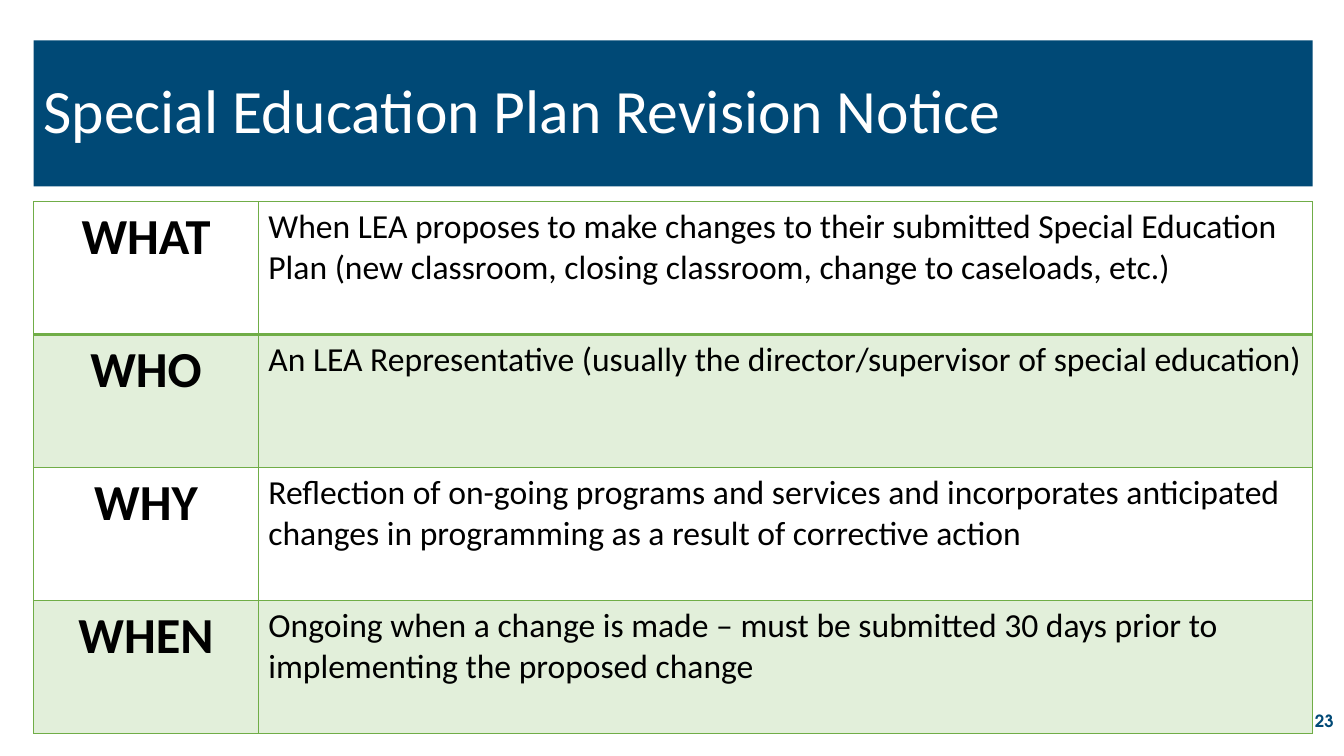
"""Build the slide that summarises the special education plan revision notice."""
from dataclasses import dataclass

import lxml.etree
import pptx
import pptx.dml.color
import pptx.enum.shapes
import pptx.enum.text
import pptx.oxml.ns
import pptx.table
import pptx.text.text
import pptx.util

Cm = pptx.util.Cm
Pt = pptx.util.Pt
Align = pptx.enum.text.PP_ALIGN
Anchor = pptx.enum.text.MSO_ANCHOR

COLORS = {
    "navy": "004976",
    "green": "70AD47",
    "pale_green": "E2EFDA",
    "white": "FFFFFF",
    "black": "000000",
}
LEFT, WIDTH = 0.85, 32.23
LABEL_WIDTH, ROW_HEIGHT = 5.66, 3.35


@dataclass
class TextStyle:
    size: int
    color: str
    bold: bool = False
    align: Align = Align.LEFT
    font: str = "Calibri"


@dataclass
class NoticeRow:
    label: str
    detail: str


TITLE_STYLE = TextStyle(44, "white")
LABEL_STYLE = TextStyle(36, "black", True, Align.CENTER)
DETAIL_STYLE = TextStyle(24, "black")
NUMBER_STYLE = TextStyle(12, "navy", True, Align.RIGHT, "TeX Gyre Adventor")

NOTICE_ROWS = [
    NoticeRow("WHAT", "When LEA proposes to make changes to their submitted Special Education "
              "Plan (new classroom, closing classroom, change to caseloads, etc.)"),
    NoticeRow("WHO", "An LEA Representative (usually the director/supervisor of special education)"),
    NoticeRow("WHY", "Reflection of on-going programs and services and incorporates anticipated "
              "changes in programming as a result of corrective action"),
    NoticeRow("WHEN", "Ongoing when a change is made – must be submitted 30 days prior to "
              "implementing the proposed change"),
]


def rgb(name: str) -> pptx.dml.color.RGBColor:
    return pptx.dml.color.RGBColor.from_string(COLORS[name])


def write(text_frame: pptx.text.text.TextFrame, text: str, style: TextStyle) -> None:
    text_frame.text = text
    text_frame.word_wrap = True
    paragraph = text_frame.paragraphs[0]
    paragraph.alignment = style.align
    font = paragraph.runs[0].font
    font.name = style.font
    font.size = Pt(style.size)
    font.bold = style.bold
    font.color.rgb = rgb(style.color)


def set_borders(cell: pptx.table._Cell, widths: dict[str, int]) -> None:
    qn = pptx.oxml.ns.qn
    properties = cell._tc.get_or_add_tcPr()
    for side, width in widths.items():
        line = lxml.etree.SubElement(properties, qn(f"a:ln{side}"), w=str(Pt(width)))
        fill = lxml.etree.SubElement(line, qn("a:solidFill"))
        lxml.etree.SubElement(fill, qn("a:srgbClr"), val=COLORS["green"])


def add_title(slide: pptx.slide.Slide) -> None:
    banner = slide.shapes.add_shape(
        pptx.enum.shapes.MSO_SHAPE.RECTANGLE, Cm(LEFT), Cm(1.02), Cm(WIDTH), Cm(3.68))
    banner.shadow.inherit = False
    banner.fill.solid()
    banner.fill.fore_color.rgb = rgb("navy")
    banner.line.fill.background()
    write(banner.text_frame, "Special Education Plan Revision Notice", TITLE_STYLE)
    banner.text_frame.vertical_anchor = Anchor.MIDDLE
    banner.text_frame.paragraphs[0].line_spacing = 0.9


def add_notice_table(slide: pptx.slide.Slide) -> None:
    table = slide.shapes.add_table(
        len(NOTICE_ROWS), 2, Cm(LEFT), Cm(5.08), Cm(WIDTH),
        Cm(ROW_HEIGHT * len(NOTICE_ROWS))).table
    table.first_row = False
    table.horz_banding = False
    table.columns[0].width = Cm(LABEL_WIDTH)
    table.columns[1].width = Cm(WIDTH - LABEL_WIDTH)
    for index, notice in enumerate(NOTICE_ROWS):
        table.rows[index].height = Cm(ROW_HEIGHT)
        borders = {"L": 1, "R": 1, "T": 2 if index == 1 else 1, "B": 2 if index == 0 else 1}
        contents = [(notice.label, LABEL_STYLE), (notice.detail, DETAIL_STYLE)]
        for column, (text, style) in enumerate(contents):
            cell = table.cell(index, column)
            write(cell.text_frame, text, style)
            set_borders(cell, borders)
            cell.fill.solid()
            cell.fill.fore_color.rgb = rgb("pale_green" if index % 2 else "white")


def add_slide_number(slide: pptx.slide.Slide) -> None:
    number = slide.shapes.add_textbox(Cm(26.24), Cm(17.65), Cm(7.62), Cm(1.02))
    write(number.text_frame, "23", NUMBER_STYLE)
    number.text_frame.vertical_anchor = Anchor.MIDDLE


def main() -> None:
    presentation = pptx.Presentation()
    presentation.slide_width = Cm(33.87)
    presentation.slide_height = Cm(19.05)
    slide = presentation.slides.add_slide(presentation.slide_layouts[6])
    add_title(slide)
    add_notice_table(slide)
    add_slide_number(slide)
    presentation.save("out.pptx")


if __name__ == "__main__":
    main()
